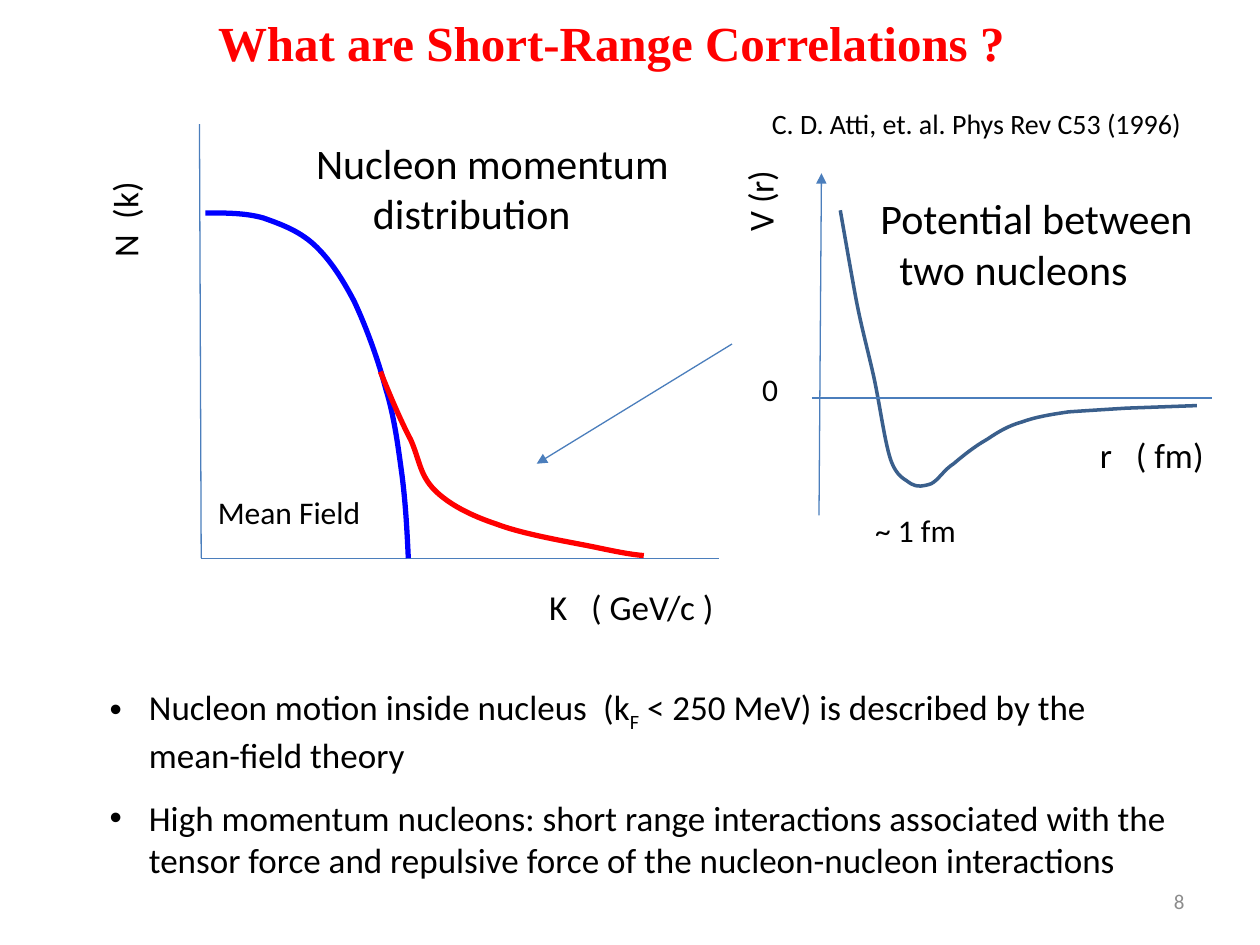
import dataclasses

import lxml.etree
import pptx
import pptx.dml.color
import pptx.enum.shapes
import pptx.enum.text
import pptx.oxml.ns
import pptx.util

Pt = pptx.util.Pt
qn = pptx.oxml.ns.qn


@dataclasses.dataclass(frozen=True)
class Theme:
    """Colours, fonts and type sizes of the deck."""
    text: str = "000000"
    title: str = "FF0000"
    number: str = "8C8C8C"
    axis: str = "4B7EBC"
    mean_field: str = "0000FF"
    correlated: str = "FF0000"
    potential: str = "3A5F8C"
    body_font: str = "Calibri"
    title_font: str = "Times New Roman"
    title_size: int = 28
    heading_size: int = 24
    body_size: int = 20
    label_size: int = 18
    cite_size: int = 16
    number_size: int = 12
    space_width: float = 4.5


@dataclasses.dataclass(frozen=True)
class Box:
    """A region of the page, in points."""
    left: float
    top: float
    width: float
    height: float

    def inner(self, left, top, width, height):
        """Return a box placed relative to this one."""
        return Box(self.left + left, self.top + top, width, height)

    def point(self, x, y):
        """Return a page position from one relative to this box."""
        return Pt(self.left + x), Pt(self.top + y)

    def lengths(self):
        """Return left, top, width and height as lengths."""
        return Pt(self.left), Pt(self.top), Pt(self.width), Pt(self.height)


THEME = Theme()

MEAN_FIELD = [
    (3.4, 50.7), (14.9, 50.7), (26.4, 50.7), (36.5, 53.6),
    (46.6, 57.2), (56.6, 60.8), (65.3, 68.7), (73.9, 76.6), (81.1, 87.4), (88.3, 101.1),
    (94.8, 114.8), (102, 134.2), (106.3, 150.8), (111.4, 167.3), (113.5, 184.6), (115.7, 200.4),
    (117.8, 217), (118.6, 232.8), (119.3, 248)]
CORRELATED = [
    (103.4, 141.4), (109.2, 155.8), (115, 169.5), (120.7, 180.3),
    (125.8, 191.8), (125.8, 200.4), (134.4, 209.1), (142.3, 217), (154.6, 223.5), (169.7, 228.5),
    (184.8, 234.3), (210.7, 238.6), (225.1, 241.5), (238.8, 244.4), (246, 245.8), (253.9, 246.5)]
POTENTIAL = [
    (16.2, 21.2), (19.1, 37.8), (22, 54.4), (24.9, 70.2),
    (27.8, 86), (31.4, 99), (35, 114.8), (38.6, 130.7), (41.4, 153), (45, 163.8),
    (48.6, 173.9), (53, 174.6), (56.6, 177.5), (60.2, 179.6), (63.8, 178.9), (68.1, 177.5),
    (72.4, 175.3), (75.3, 169.6), (81, 166), (86.1, 161.6), (93.3, 155.9), (99.8, 152.3),
    (106.2, 148), (112, 144.4), (119.9, 142.2), (127.8, 139.3), (136.5, 137.9), (146.6, 136.4),
    (156.6, 135.7), (179.7, 134.3), (179.7, 134.3), (179.7, 134.3), (220, 132.8), (220, 132.8)]


def rgb(value):
    """Return a colour from its hex value."""
    return pptx.dml.color.RGBColor.from_string(value)


def add_span(para, text, size=THEME.body_size, color=THEME.text, font=THEME.body_font):
    """Add one formatted run and return it."""
    span = para.add_run()
    span.text = text
    span.font.size = Pt(size)
    span.font.name = font
    span.font.color.rgb = rgb(color)
    return span


def add_spaced(para, text, size, gap):
    """Add text whose space before the bracket is widened by a number of spaces."""
    before, _, after = text.partition(" (")
    add_span(para, before, size)
    space = add_span(para, " ", size)
    space.font._element.set("spc", str(round(gap * THEME.space_width * 100)))
    add_span(para, "(" + after, size)


def add_label(page, box, lines, size=THEME.body_size, gap=0, indent=0, rotation=0):
    """Add an unwrapped text label, indenting the lines after the first."""
    shape = page.shapes.add_textbox(*box.lengths())
    shape.rotation = rotation
    frame = shape.text_frame
    frame.word_wrap = False
    for index, line in enumerate(lines):
        para = frame.add_paragraph() if index else frame.paragraphs[0]
        if index:
            para._p.get_or_add_pPr().set("marL", str(Pt(indent)))
        if gap:
            add_spaced(para, line, size, gap)
        else:
            add_span(para, line, size)


def add_line(page, start, end, arrow=False):
    """Add a thin straight line, with an arrowhead at its end if asked."""
    line = page.shapes.add_connector(pptx.enum.shapes.MSO_CONNECTOR.STRAIGHT, *start, *end)
    line.line.color.rgb = rgb(THEME.axis)
    line.line.width = Pt(0.75)
    if arrow:
        lxml.etree.SubElement(line.line._get_or_add_ln(), qn("a:tailEnd"), type="triangle")
    lxml.etree.SubElement(line._element.spPr, qn("a:effectLst"))


def add_curve(page, box, points, color, width):
    """Add a smooth open curve through cubic segments of three points each."""
    start, *rest = [box.point(*point) for point in points]
    builder = page.shapes.build_freeform(*start)
    builder.add_line_segments(rest, close=False)
    shape = builder.convert_to_shape()
    segments = list(shape._element.iter(qn("a:lnTo")))
    outline = segments[0].getparent()
    for first in range(0, len(segments), 3):
        cubic = lxml.etree.SubElement(outline, qn("a:cubicBezTo"))
        for segment in segments[first:first + 3]:
            cubic.append(segment[0])
            outline.remove(segment)
    shape.shadow.inherit = False
    shape.fill.background()
    shape.line.color.rgb = rgb(color)
    shape.line.width = Pt(width)


def place_placeholder(shape, box):
    """Move a placeholder into its box and return its text frame."""
    shape.left, shape.top, shape.width, shape.height = box.lengths()
    frame = shape.text_frame
    frame.auto_size = pptx.enum.text.MSO_AUTO_SIZE.NONE
    frame.vertical_anchor = pptx.enum.text.MSO_ANCHOR.TOP
    return frame


def add_title(page, box):
    """Fill the title placeholder."""
    para = place_placeholder(page.shapes.title, box).paragraphs[0]
    para.alignment = pptx.enum.text.PP_ALIGN.LEFT
    span = add_span(para, "What are Short-Range Correlations ?",
                    THEME.title_size, THEME.title, THEME.title_font)
    span.font.bold = True


def add_momentum_plot(page, box):
    """Draw the nucleon momentum distribution."""
    corner = box.point(1, box.height)
    add_line(page, box.point(0, 0), corner)
    add_line(page, corner, box.point(box.width, box.height))
    add_curve(page, box, MEAN_FIELD, THEME.mean_field, 3)
    add_curve(page, box, CORRELATED, THEME.correlated, 3)
    add_label(page, box.inner(192.7, 260, 112, 32), ["K ( GeV/c )"], gap=2)
    add_label(page, box.inner(-72, 37.7, 59, 32), ["N (k)"], gap=1, rotation=270)
    add_label(page, box.inner(3.4, 207, 97, 29), ["Mean Field"], THEME.label_size)
    add_label(page, box.inner(59.5, 4, 218, 65.5), ["Nucleon momentum", "distribution"],
              THEME.heading_size, indent=32.5)


def add_potential_plot(page, box):
    """Draw the potential between two nucleons."""
    add_curve(page, box, POTENTIAL, THEME.potential, 2)
    add_line(page, box.point(0, 128.5), box.point(box.width, 128.5))
    add_line(page, box.point(4, box.height), box.point(5.4, 0), arrow=True)
    add_label(page, box.inner(32, 7.6, 195, 65.5), ["Potential between", "two nucleons"],
              THEME.heading_size, indent=10.8)
    add_label(page, box.inner(-35.6, 109, 24, 29), ["0"], THEME.label_size)
    add_label(page, box.inner(157.4, 145, 75.6, 32), ["r ( fm)"], gap=2)
    add_label(page, box.inner(-55, -1, 51, 32), ["V (r)"], rotation=270)
    add_label(page, box.inner(29, 189.7, 61, 29), ["~ 1 fm"], THEME.label_size)
    add_label(page, box.inner(-30, -41.4, 252, 26.6),
              ["C. D. Atti, et. al. Phys Rev C53 (1996)"], THEME.cite_size)


def add_points(page, box):
    """Fill the body placeholder with the two bullets."""
    frame = place_placeholder(page.placeholders[1], box)
    motion, force = frame.paragraphs[0], frame.add_paragraph()
    for para, before, right in ((motion, 0, 36), (force, 12, 0)):
        para.space_before = Pt(before)
        layout = para._p.get_or_add_pPr()
        for name, value in (("marL", 22.5), ("marR", right), ("indent", -22.5)):
            layout.set(name, str(Pt(value)))
    add_spaced(motion, "Nucleon motion inside nucleus (k", THEME.body_size, 1)
    add_span(motion, "F").font._element.set("baseline", "-25000")
    add_span(motion, " < 250 MeV) is described by the mean-field theory")
    add_span(force, "High momentum nucleons: short range interactions associated with the "
                    "tensor force and repulsive force of the nucleon-nucleon interactions")


def add_page_number(page, box):
    """Add the page number at the right of its box."""
    frame = page.shapes.add_textbox(*box.lengths()).text_frame
    frame.word_wrap = True
    frame.vertical_anchor = pptx.enum.text.MSO_ANCHOR.MIDDLE
    para = frame.paragraphs[0]
    para.alignment = pptx.enum.text.PP_ALIGN.RIGHT
    add_span(para, "8", THEME.number_size, THEME.number)


def main():
    """Build the deck and save it."""
    deck = pptx.Presentation()
    deck.slide_width, deck.slide_height = Pt(720), Pt(540)
    page = deck.slides.add_slide(deck.slide_layouts[1])
    add_title(page, Box(117.4, 3.6, 476, 41))
    add_momentum_plot(page, Box(114, 71, 297, 248))
    add_potential_plot(page, Box(464, 99, 228.5, 195.5))
    add_line(page, (Pt(418.3), Pt(196.6)), (Pt(306.7), Pt(265)), arrow=True)
    add_points(page, Box(55.4, 388, 628.6, 120))
    add_page_number(page, Box(516, 500.4, 168, 28.8))
    deck.save("out.pptx")


if __name__ == "__main__":
    main()
